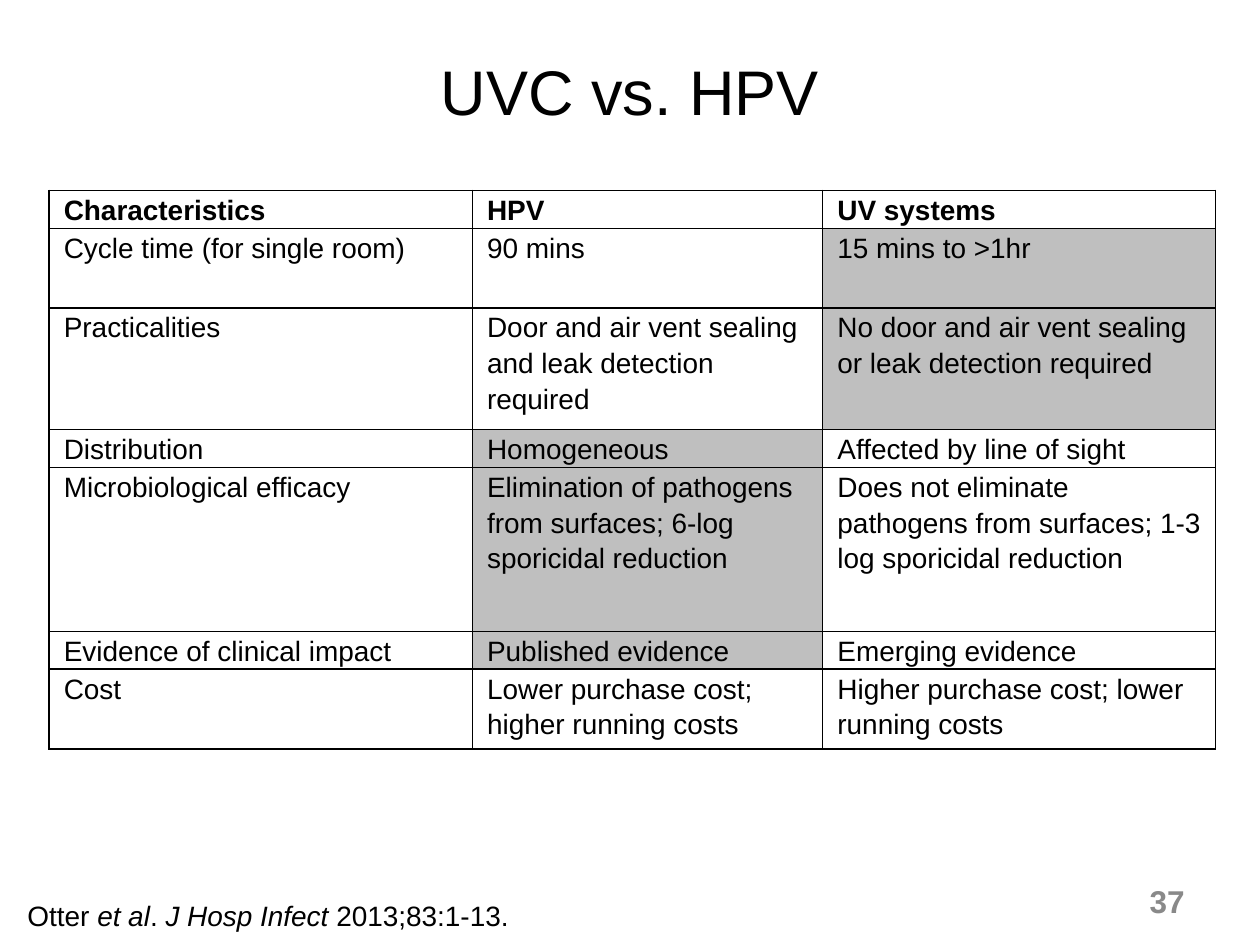
from lxml.etree import SubElement
from pptx import Presentation
from pptx.dml.color import RGBColor
from pptx.enum.text import MSO_ANCHOR as ANCHOR, MSO_AUTO_SIZE as AUTO, PP_ALIGN as ALIGN
from pptx.oxml.ns import qn
from pptx.util import Pt

BLACK = RGBColor(0x00, 0x00, 0x00)
SHADE = RGBColor(0xBF, 0xBF, 0xBF)
MUTED = RGBColor(0x89, 0x89, 0x89)
FONT = "Arial"

TITLE = "UVC vs. HPV"
ROWS = [
    ("Characteristics", "HPV", "UV systems"),
    ("Cycle time (for single room)", "90 mins", "15 mins to >1hr"),
    ("Practicalities", "Door and air vent sealing and leak detection required",
     "No door and air vent sealing or leak detection required"),
    ("Distribution", "Homogeneous", "Affected by line of sight"),
    ("Microbiological efficacy",
     "Elimination of pathogens from surfaces; 6-log sporicidal reduction",
     "Does not eliminate pathogens from surfaces; 1-3 log sporicidal reduction"),
    ("Evidence of clinical impact", "Published evidence", "Emerging evidence"),
    ("Cost", "Lower purchase cost; higher running costs",
     "Higher purchase cost; lower running costs"),
]
FAVOURED = {1: 2, 2: 2, 3: 1, 4: 1, 5: 1}
COL_WIDTHS = (241.9, 200.2, 224.6)
ROW_HEIGHTS = (21.7, 45.5, 69.5, 21.7, 93.6, 21.7, 45.5)
CITATION = [("Otter ", False), ("et al", True), (". ", False),
            ("J Hosp Infect ", True), ("2013;83:1-13.", False)]
PAGE = "37"


def add_run(p, text, size, color=BLACK, bold=False, italic=False):
    r = p.add_run()
    r.text = text
    f = r.font
    f.name, f.size, f.bold, f.italic = FONT, Pt(size), bold, italic
    f.color.rgb = color


def add_borders(cell):
    tc_pr = cell._tc.get_or_add_tcPr()
    for i, side in enumerate(("a:lnL", "a:lnR", "a:lnT", "a:lnB")):
        ln = SubElement(tc_pr, qn(side), w=str(Pt(1)))
        fill = SubElement(ln, qn("a:solidFill"))
        SubElement(fill, qn("a:srgbClr"), val=str(BLACK))
        tc_pr.remove(ln)
        tc_pr.insert(i, ln)


def fill_cell(cell, text, bold, shaded):
    cell.margin_left = cell.margin_right = Pt(8.5)
    cell.margin_top = cell.margin_bottom = 0
    p = cell.text_frame.paragraphs[0]
    p.line_spacing = 1.15
    p.space_before = p.space_after = Pt(2)
    add_run(p, text, 16, bold=bold)
    if shaded:
        cell.fill.solid()
        cell.fill.fore_color.rgb = SHADE
    else:
        cell.fill.background()
    add_borders(cell)


def add_comparison(slide):
    table = slide.shapes.add_table(len(ROWS), len(COL_WIDTHS), Pt(28), Pt(108.8),
                                   Pt(sum(COL_WIDTHS)), Pt(sum(ROW_HEIGHTS))).table
    table.first_row = table.horz_banding = False
    for col, width in zip(table.columns, COL_WIDTHS):
        col.width = Pt(width)
    for i, (texts, height) in enumerate(zip(ROWS, ROW_HEIGHTS)):
        table.rows[i].height = Pt(height)
        for j, text in enumerate(texts):
            fill_cell(table.cell(i, j), text, i == 0, FAVOURED.get(i) == j)


def main():
    """Build the slide comparing UVC and HPV room disinfection."""
    prs = Presentation()
    prs.slide_width, prs.slide_height = Pt(720), Pt(540)
    slide = prs.slides.add_slide(prs.slide_layouts[5])

    title = slide.shapes.title
    title.left, title.top, title.width, title.height = Pt(36), Pt(26.6), Pt(648), Pt(90)
    tf = title.text_frame
    tf.vertical_anchor = ANCHOR.TOP
    p = tf.paragraphs[0]
    p.alignment = ALIGN.CENTER
    add_run(p, TITLE, 36)

    add_comparison(slide)

    tf = slide.shapes.add_textbox(Pt(8.6), Pt(509.8), Pt(293.8), Pt(26.6)).text_frame
    tf.word_wrap = False
    tf.auto_size = AUTO.SHAPE_TO_FIT_TEXT
    for text, italic in CITATION:
        add_run(tf.paragraphs[0], text, 16, italic=italic)

    tf = slide.shapes.add_textbox(Pt(516), Pt(500.4), Pt(168), Pt(28.8)).text_frame
    tf.word_wrap = True
    tf.vertical_anchor = ANCHOR.MIDDLE
    p = tf.paragraphs[0]
    p.alignment = ALIGN.RIGHT
    add_run(p, PAGE, 18, MUTED, bold=True)

    prs.save("out.pptx")


if __name__ == "__main__":
    main()
